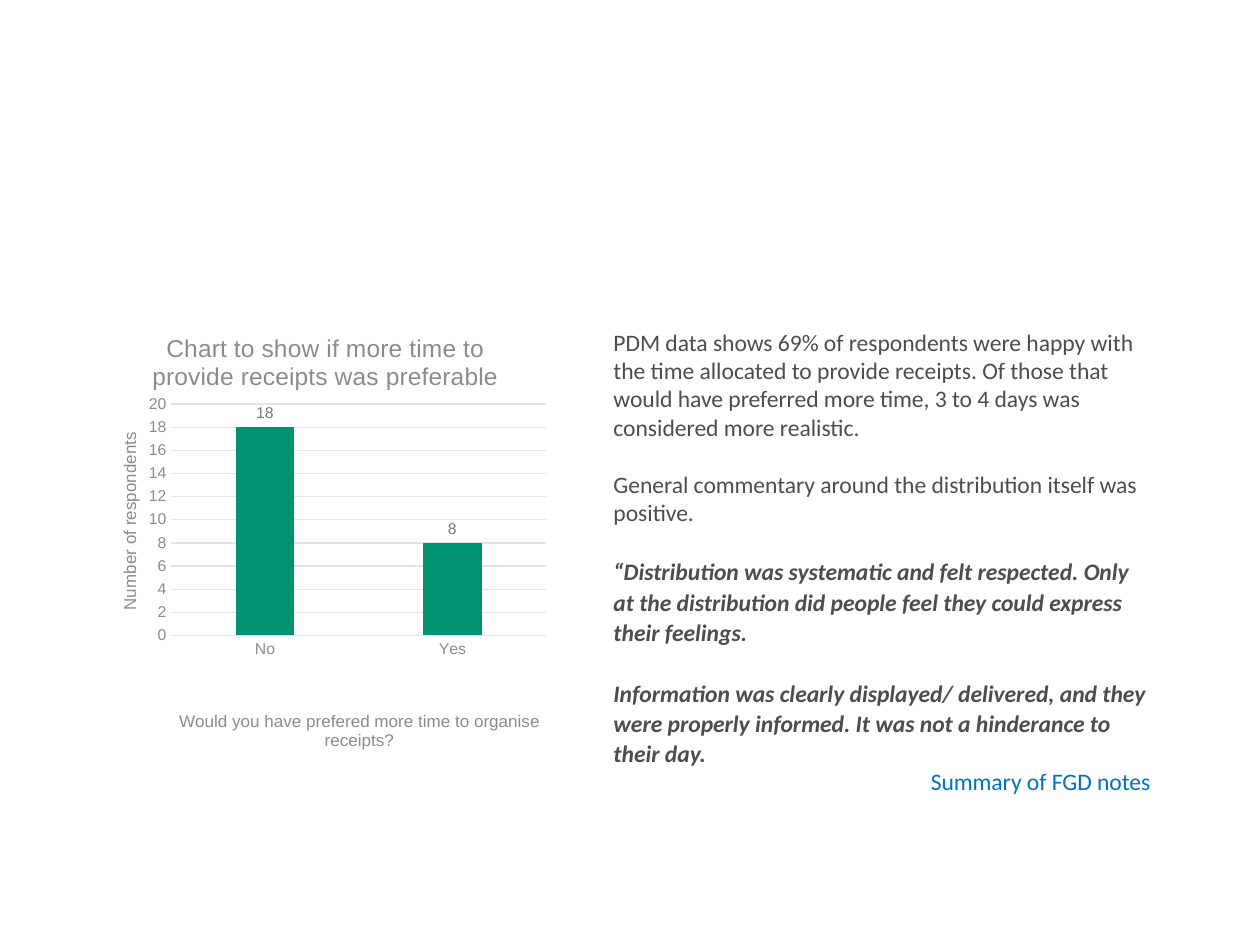
from dataclasses import dataclass

import lxml.etree
import pptx
import pptx.chart.data
import pptx.dml.color
import pptx.enum.chart
import pptx.enum.text
import pptx.oxml.ns
import pptx.util

Pt = pptx.util.Pt
RGBColor = pptx.dml.color.RGBColor
Align = pptx.enum.text.PP_ALIGN
qn = pptx.oxml.ns.qn

TEXT_COLOR = RGBColor(0x4C, 0x4D, 0x4C)
SOURCE_BLUE = RGBColor(0x00, 0x70, 0xC0)
AXIS_GRAY = RGBColor(0x8A, 0x8C, 0x8A)
LABEL_GRAY = RGBColor(0x78, 0x7A, 0x78)
GRID_GRAY = RGBColor(0xE4, 0xE4, 0xE4)
BAR_GREEN = RGBColor(0x00, 0x93, 0x72)


@dataclass
class Comment:
    text: str
    gap: float = 0
    line_spacing: float = 1.0
    emphasis: bool = False
    color: RGBColor = TEXT_COLOR
    align: Align = Align.LEFT


COMMENTS = [
    Comment("PDM data shows 69% of respondents were happy with the time allocated to "
            "provide receipts. Of those that would have preferred more time, 3 to 4 days "
            "was considered more realistic."),
    Comment("General commentary around the distribution itself was positive.", gap=16.5),
    Comment("“Distribution was systematic and felt respected. Only at the distribution "
            "did people feel they could express their feelings.",
            gap=16.5, line_spacing=1.07, emphasis=True),
    Comment("Information was clearly displayed/ delivered, and they were properly "
            "informed. It was not a hinderance to their day.",
            gap=17.5, line_spacing=1.07, emphasis=True),
    Comment("Summary of FGD notes", color=SOURCE_BLUE, align=Align.RIGHT),
]


def style_font(font, *, size: float, color: RGBColor, name: str = "Arial",
               bold: bool = False, italic: bool = False) -> None:
    font.name = name
    font.size = Pt(size)
    font.bold = bold
    font.italic = italic
    font.color.rgb = color


def write_text(paragraph, text: str, *, align: Align = Align.LEFT, gap: float = 0,
               line_spacing: float = 1.0, **font_format) -> None:
    paragraph.alignment = align
    paragraph.space_before = Pt(gap)
    paragraph.line_spacing = line_spacing
    run = paragraph.add_run()
    run.text = text
    style_font(run.font, **font_format)


def set_layout(element, **fractions: float) -> None:
    """Fix a chart part at fractions of the chart's size."""
    layout = element.find(qn("c:layout"))
    if layout is not None:
        element.remove(layout)
    layout = lxml.etree.Element(qn("c:layout"))
    element.insert(0 if element.find(qn("c:tx")) is None else 1, layout)
    manual = lxml.etree.SubElement(layout, qn("c:manualLayout"))
    values = {"xMode": "edge", "yMode": "edge", **fractions}
    if "w" in fractions:
        values = {"layoutTarget": "inner", **values}
    for tag, value in values.items():
        lxml.etree.SubElement(manual, qn(f"c:{tag}")).set("val", str(value))


def write_chart_title(title, text: str, size: float, x: float, y: float) -> None:
    write_text(title.text_frame.paragraphs[0], text, align=Align.CENTER,
               size=size, color=AXIS_GRAY)
    set_layout(title.element, x=x, y=y)


def style_axis(axis, title: str, x: float, y: float) -> None:
    axis.major_tick_mark = axis.minor_tick_mark = pptx.enum.chart.XL_TICK_MARK.NONE
    style_font(axis.tick_labels.font, size=9, color=AXIS_GRAY)
    write_chart_title(axis.axis_title, title, 9.75, x, y)


def style_line(line) -> None:
    line.color.rgb = GRID_GRAY
    line.width = Pt(0.75)


def add_receipts_chart(slide) -> None:
    data = pptx.chart.data.CategoryChartData()
    data.categories = ["No", "Yes"]
    data.add_series("Series 1", [18, 8])
    chart = slide.shapes.add_chart(
        pptx.enum.chart.XL_CHART_TYPE.COLUMN_CLUSTERED,
        Pt(49.7), Pt(175), Pt(267.8), Pt(257), data).chart
    chart.has_legend = False
    style_font(chart.font, size=10, color=TEXT_COLOR)
    write_chart_title(chart.chart_title,
                      "Chart to show if more time to provide receipts was preferable",
                      14, 0.13, 0.05)
    chart.chart_title.include_in_layout = False
    set_layout(chart.element.find(f".//{qn('c:plotArea')}"),
               x=0.18, y=0.22, w=0.8, h=0.52)

    style_axis(chart.category_axis,
               "Would you have prefered more time to organise receipts?", 0.19, 0.9)
    style_line(chart.category_axis.format.line)
    value_axis = chart.value_axis
    style_axis(value_axis, "Number of respondents", 0.06, 0.28)
    value_axis.minimum_scale, value_axis.maximum_scale = 0, 20
    value_axis.major_unit = 2
    value_axis.format.line.fill.background()
    style_line(value_axis.major_gridlines.format.line)

    plot = chart.plots[0]
    plot.vary_by_categories = False
    plot.gap_width, plot.overlap = 219, -27
    fill = plot.series[0].format.fill
    fill.solid()
    fill.fore_color.rgb = BAR_GREEN
    labels = plot.series[0].data_labels
    labels.show_value = True
    labels.position = pptx.enum.chart.XL_LABEL_POSITION.OUTSIDE_END
    style_font(labels.font, size=9, color=LABEL_GRAY)


def add_comments(slide) -> None:
    frame = slide.shapes.add_textbox(Pt(343.5), Pt(183.6), Pt(321), Pt(326)).text_frame
    frame.word_wrap = True
    for index, comment in enumerate(COMMENTS):
        paragraph = frame.add_paragraph() if index else frame.paragraphs[0]
        write_text(paragraph, comment.text, align=comment.align, gap=comment.gap,
                   line_spacing=comment.line_spacing, name="Calibri", size=13.5,
                   color=comment.color, bold=comment.emphasis, italic=comment.emphasis)


def main() -> None:
    presentation = pptx.Presentation()
    presentation.slide_width, presentation.slide_height = Pt(720), Pt(540)
    slide = presentation.slides.add_slide(presentation.slide_layouts[6])
    add_comments(slide)
    add_receipts_chart(slide)
    presentation.save("out.pptx")


if __name__ == "__main__":
    main()
